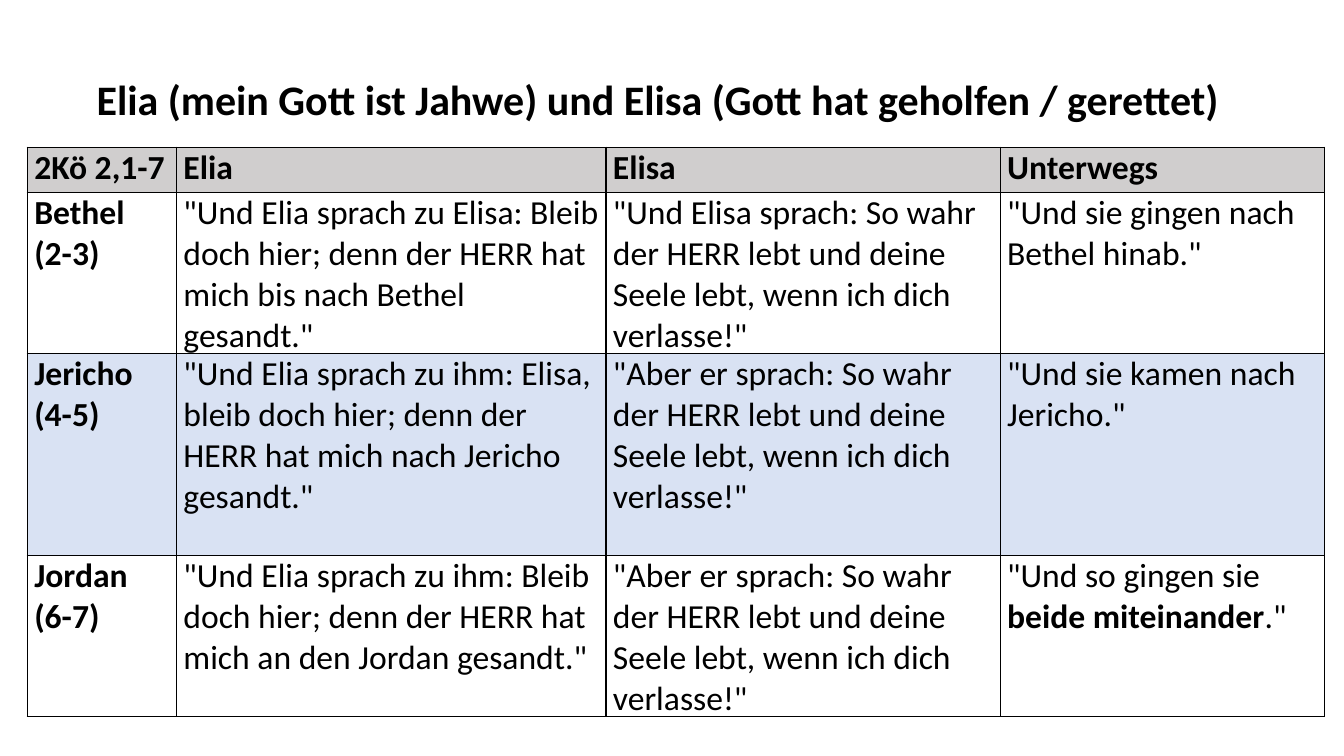
from dataclasses import dataclass

from lxml import etree
from pptx import Presentation
from pptx.dml.color import RGBColor
from pptx.enum.text import MSO_AUTO_SIZE
from pptx.oxml.ns import qn
from pptx.util import Inches, Pt

SHAPE_TO_FIT_TEXT = MSO_AUTO_SIZE.SHAPE_TO_FIT_TEXT
FONT = "Calibri"
BLACK = "000000"
GREY = "D0CECE"
BLUE = "D9E2F3"
COLUMN_WIDTHS = (1.48, 4.26, 3.91, 3.22)
BORDER_TAGS = ("a:lnL", "a:lnR", "a:lnT", "a:lnB")


@dataclass(frozen=True)
class Run:
    text: str
    bold: bool = False


@dataclass(frozen=True)
class Row:
    height: float
    cells: tuple[tuple[Run, ...], ...]
    fill: str | None = None


def station(height: float, place: str, elia: str, elisa: str,
            underway: tuple[Run, ...], fill: str | None = None) -> Row:
    return Row(height, ((Run(place, True),), (Run(elia),), (Run(elisa),), underway), fill)


OATH = "So wahr der HERR lebt und deine Seele lebt, wenn ich dich verlasse!\""
HEADINGS = ("2Kö 2,1-7", "Elia", "Elisa", "Unterwegs")
ROWS = (
    Row(0.45, tuple((Run(heading, True),) for heading in HEADINGS), GREY),
    station(
        1.6, "Bethel (2-3)",
        "\"Und Elia sprach zu Elisa: Bleib doch hier; denn der HERR hat mich bis nach Bethel gesandt.\"",
        f"\"Und Elisa sprach: {OATH}",
        (Run("\"Und sie gingen nach Bethel hinab.\""),),
    ),
    station(
        2.0, "Jericho (4-5)",
        "\"Und Elia sprach zu ihm: Elisa, bleib doch hier; denn der HERR hat mich nach Jericho gesandt.\"",
        f"\"Aber er sprach: {OATH}",
        (Run("\"Und sie kamen nach Jericho.\""),),
        BLUE,
    ),
    station(
        1.6, "Jordan (6-7)",
        "\"Und Elia sprach zu ihm: Bleib doch hier; denn der HERR hat mich an den Jordan gesandt.\"",
        f"\"Aber er sprach: {OATH}",
        (Run("\"Und so gingen sie "), Run("beide miteinander", True), Run(".\"")),
    ),
)


def color(value: str) -> RGBColor:
    return RGBColor.from_string(value)


def add_runs(paragraph, runs: tuple[Run, ...], size: int) -> None:
    for item in runs:
        run = paragraph.add_run()
        run.text = item.text
        run.font.name = FONT
        run.font.size = Pt(size)
        run.font.bold = item.bold
        run.font.color.rgb = color(BLACK)


def add_borders(cell) -> None:
    properties = cell._tc.get_or_add_tcPr()
    for position, tag in enumerate(BORDER_TAGS):
        line = etree.Element(qn(tag), w=str(Pt(1)))
        fill = etree.SubElement(line, qn("a:solidFill"))
        etree.SubElement(fill, qn("a:srgbClr"), val=BLACK)
        properties.insert(position, line)


def add_title(slide) -> None:
    box = slide.shapes.add_textbox(Inches(0.86), Inches(0.65), Inches(11.69), Inches(0.62))
    frame = box.text_frame
    frame.word_wrap = True
    frame.auto_size = SHAPE_TO_FIT_TEXT
    paragraph = frame.paragraphs[0]
    paragraph.line_spacing = 1.07
    paragraph.space_before = Pt(12)
    title = "Elia (mein Gott ist Jahwe) und Elisa (Gott hat geholfen / gerettet)"
    add_runs(paragraph, (Run(title, True),), 30)


def fill_cell(cell, runs: tuple[Run, ...], fill: str | None) -> None:
    cell.margin_left = cell.margin_right = Inches(0.07)
    cell.margin_top = cell.margin_bottom = 0
    if fill:
        cell.fill.solid()
        cell.fill.fore_color.rgb = color(fill)
    else:
        cell.fill.background()
    add_borders(cell)
    add_runs(cell.text_frame.paragraphs[0], runs, 24)


def add_journey_table(slide) -> None:
    frame = slide.shapes.add_table(
        len(ROWS), len(COLUMN_WIDTHS), Inches(0.27), Inches(1.46),
        Inches(sum(COLUMN_WIDTHS)), Inches(sum(row.height for row in ROWS)),
    )
    table = frame.table
    table.first_row = table.horz_banding = False
    for column, width in zip(table.columns, COLUMN_WIDTHS):
        column.width = Inches(width)
    for table_row, row in zip(table.rows, ROWS):
        table_row.height = Inches(row.height)
        for cell, runs in zip(table_row.cells, row.cells):
            fill_cell(cell, runs, row.fill)


def main() -> None:
    """Build the slide that compares Elia and Elisa on their journey."""
    presentation = Presentation()
    presentation.slide_width = Inches(13.33)
    presentation.slide_height = Inches(7.5)
    slide = presentation.slides.add_slide(presentation.slide_layouts[6])
    add_title(slide)
    add_journey_table(slide)
    presentation.save("out.pptx")


if __name__ == "__main__":
    main()
